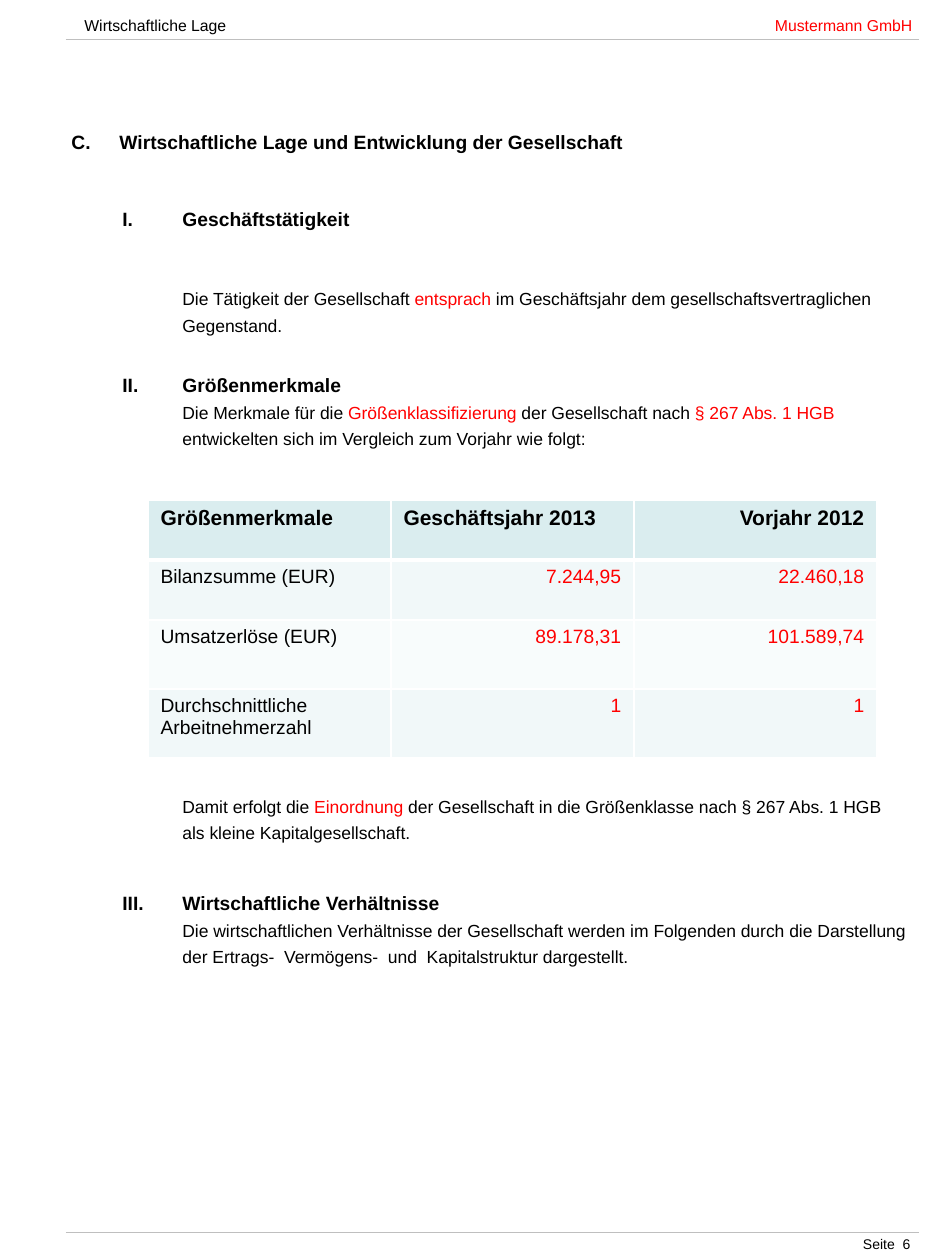
from dataclasses import dataclass

from lxml.etree import SubElement
from pptx import Presentation
from pptx.dml.color import RGBColor
from pptx.enum.shapes import MSO_CONNECTOR
from pptx.enum.text import PP_ALIGN
from pptx.oxml.ns import qn
from pptx.util import Emu, Pt

PX_PER_INCH = 126
PAGE_WIDTH, PAGE_HEIGHT = 945, 1260


@dataclass(frozen=True)
class Theme:
    font: str = "Arial"
    ink: str = "000000"
    accent: str = "FF0000"
    rule: str = "BFBFBF"
    border: str = "FFFFFF"
    head_fill: str = "DAEDEF"
    row_fills: tuple = ("F1F8F9", "F8FCFC")
    heading: int = 11
    body: int = 10
    header: int = 9
    footer: int = 8
    table_head: int = 12
    leading: int = 15


@dataclass(frozen=True)
class Block:
    """Text in which |bars| enclose accented words; space is in points."""
    text: str
    space: int = 0
    number: int = 0  # section number; 0 for body text


THEME = Theme()

TITLE = "C.\tWirtschaftliche Lage und Entwicklung der Gesellschaft"
BLOCKS = [
    Block("Geschäftstätigkeit", 29, 1),
    Block("Die Tätigkeit der Gesellschaft |entsprach| im Geschäftsjahr dem "
          "gesellschaftsvertraglichen\nGegenstand.", 30),
    Block("Größenmerkmale", 20, 2),
    Block("Die Merkmale für die |Größenklassifizierung| der Gesellschaft nach "
          "|§ 267 Abs. 1 HGB|\nentwickelten sich im Vergleich zum Vorjahr wie folgt:"),
    Block("Damit erfolgt die |Einordnung| der Gesellschaft in die Größenklasse "
          "nach § 267 Abs. 1 HGB\nals kleine Kapitalgesellschaft.", 195),
    Block("Wirtschaftliche Verhältnisse", 26, 3),
    Block("Die wirtschaftlichen Verhältnisse der Gesellschaft werden im Folgenden "
          "durch die Darstellung\nder Ertrags-  Vermögens-  und  Kapitalstruktur "
          "dargestellt."),
]
TABLE_ROWS = [
    ("Größenmerkmale", "Geschäftsjahr 2013", "Vorjahr 2012"),
    ("Bilanzsumme (EUR)", "7.244,95", "22.460,18"),
    ("Umsatzerlöse (EUR)", "89.178,31", "101.589,74"),
    ("Durchschnittliche Arbeitnehmerzahl", "1", "1"),
]
ROW_HEIGHTS = (60, 60, 69, 69)
COLUMN_WIDTH = 243


def px(length: int) -> Emu:
    return Emu(round(length * 914400 / PX_PER_INCH))


def style(span, size: int, color: str = THEME.ink, bold: bool = False) -> None:
    font = span.font
    font.name, font.size, font.bold = THEME.font, Pt(size), bold
    font.color.rgb = RGBColor.from_string(color)


def write(para, text: str, size: int, bold: bool = False) -> None:
    """Write lines, giving every part between bars the accent colour."""
    for index, line in enumerate(text.split("\n")):
        if index:
            para.add_line_break()
        for place, part in enumerate(line.split("|")):
            if part:
                span = para.add_run()
                span.text = part
                style(span, size, THEME.accent if place % 2 else THEME.ink, bold)


def indent(para, left: int, hanging: int):
    properties = para._p.get_or_add_pPr()
    properties.set("marL", str(px(left)))
    properties.set("indent", str(-px(hanging)))
    return properties


def add_text(page, left: int, top: int, width: int, height: int):
    box = page.shapes.add_textbox(px(left), px(top), px(width), px(height))
    box.text_frame.word_wrap = True
    return box.text_frame


def add_rule(page, top: int) -> None:
    rule = page.shapes.add_connector(
        MSO_CONNECTOR.STRAIGHT, px(66), px(top), px(919), px(top))
    rule.line.color.rgb = RGBColor.from_string(THEME.rule)
    rule.line.width = Pt(0.1)
    SubElement(rule._element.spPr, qn("a:effectLst"))


def add_block(frame, block: Block) -> None:
    para = frame.add_paragraph()
    para.line_spacing = Pt(THEME.leading)
    para.space_before = Pt(block.space)
    if block.number:
        properties = indent(para, 111, 60)
        SubElement(properties, qn("a:buFont"), typeface=THEME.font)
        SubElement(properties, qn("a:buAutoNum"), type="romanUcPeriod",
                   startAt=str(block.number))
        write(para, block.text, THEME.heading, bold=True)
    else:
        indent(para, 111, 0)
        write(para, block.text, THEME.body)


def add_borders(cell, bottom: int) -> None:
    properties = cell._tc.get_or_add_tcPr()
    for side, width in (("L", 1), ("R", 1), ("T", 1), ("B", bottom)):
        line = SubElement(properties, qn(f"a:ln{side}"), w=str(Pt(width)))
        fill = SubElement(line, qn("a:solidFill"))
        SubElement(fill, qn("a:srgbClr"), val=THEME.border)


def add_size_table(page) -> None:
    columns = len(TABLE_ROWS[0])
    table = page.shapes.add_table(
        len(TABLE_ROWS), columns, px(148), px(500),
        px(COLUMN_WIDTH * columns), px(sum(ROW_HEIGHTS))).table
    for column in table.columns:
        column.width = px(COLUMN_WIDTH)
    for row, (texts, height) in enumerate(zip(TABLE_ROWS, ROW_HEIGHTS)):
        table.rows[row].height = px(height)
        head = row == 0
        fill = THEME.head_fill if head else THEME.row_fills[(row - 1) % 2]
        for column, text in enumerate(texts):
            cell = table.cell(row, column)
            add_borders(cell, 3 if head else 1)
            cell.fill.solid()
            cell.fill.fore_color.rgb = RGBColor.from_string(fill)
            para = cell.text_frame.paragraphs[0]
            para.text = text
            right = column == 2 or (column == 1 and not head)
            para.alignment = PP_ALIGN.RIGHT if right else PP_ALIGN.LEFT
            color = THEME.accent if column and not head else THEME.ink
            style(para.runs[0], THEME.table_head if head else THEME.heading,
                  color, head)


def main() -> None:
    deck = Presentation()
    deck.slide_width, deck.slide_height = px(PAGE_WIDTH), px(PAGE_HEIGHT)
    page = deck.slides.add_slide(deck.slide_layouts[6])

    # Header: title on the left, company at a right tab
    add_rule(page, 39)
    para = add_text(page, 72, 10, 873, 32).paragraphs[0]
    tabs = SubElement(para._p.get_or_add_pPr(), qn("a:tabLst"))
    SubElement(tabs, qn("a:tab"), pos=str(px(828)), algn="r")
    write(para, "Wirtschaftliche Lage\t|Mustermann GmbH|", THEME.header)

    # Footer
    para = add_text(page, 55, 1229, 868, 31).paragraphs[0]
    para.alignment = PP_ALIGN.RIGHT
    write(para, "Seite  6", THEME.footer)
    add_rule(page, 1232)

    # Chapter title and sections
    frame = add_text(page, 59, 129, 886, 858)
    para = frame.paragraphs[0]
    para.line_spacing = 0.8
    indent(para, 48, 48)
    write(para, TITLE, THEME.heading, bold=True)
    for block in BLOCKS:
        add_block(frame, block)

    # Size criteria
    add_size_table(page)
    deck.save("out.pptx")


if __name__ == "__main__":
    main()
